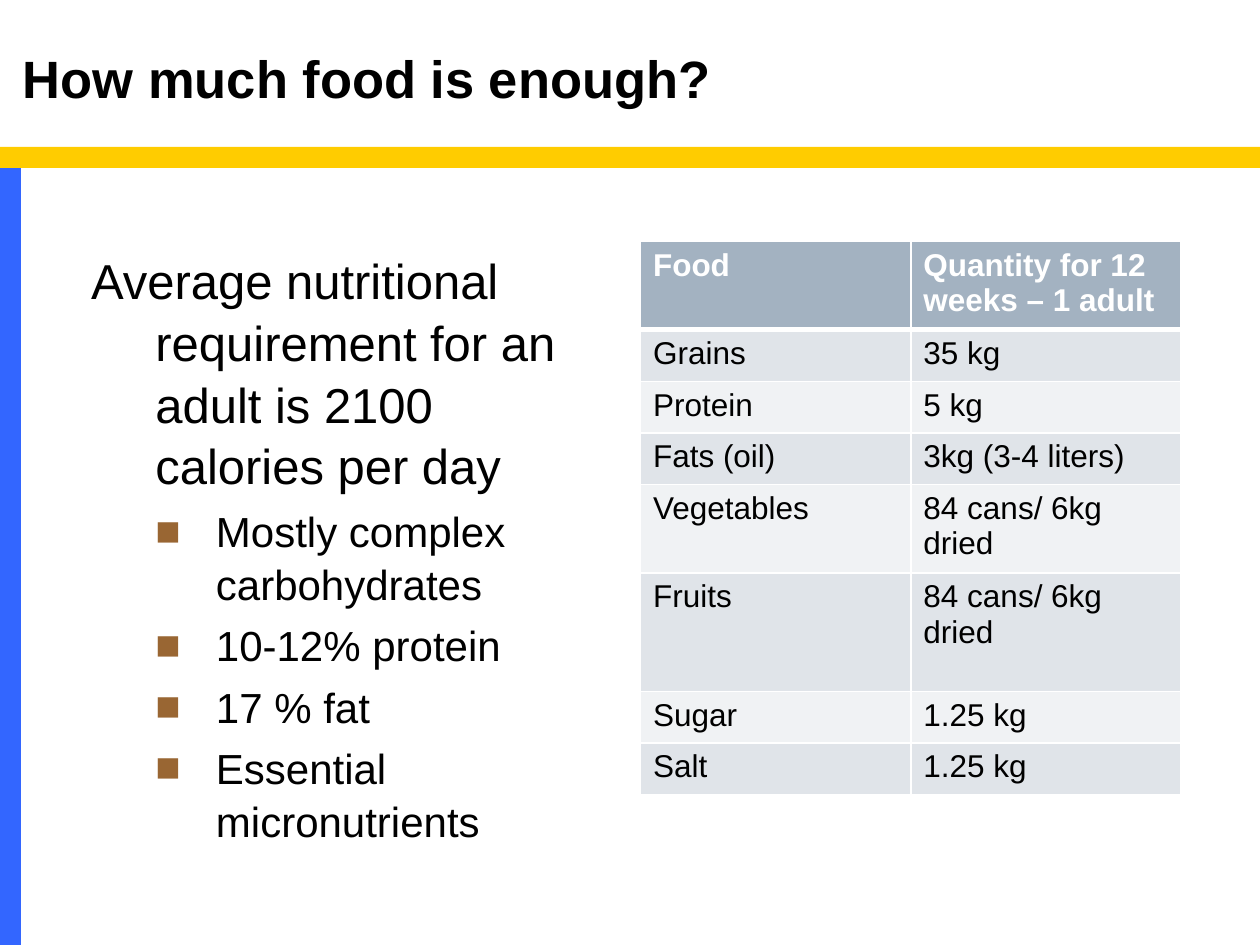
from dataclasses import dataclass

from lxml import etree
from pptx import Presentation
from pptx import util as u
from pptx.dml.color import RGBColor
from pptx.enum import shapes, text
from pptx.oxml.ns import qn


@dataclass(frozen=True)
class Theme:
    """Colours, font and type sizes of the slide."""
    font: str = "Arial"
    ink: str = "000000"
    paper: str = "FFFFFF"
    band: str = "FFCC00"
    rail: str = "3366FF"
    bullet: str = "996633"
    header: str = "A3B2C1"
    stripes: tuple = ("E0E4E9", "F0F2F4")
    title_size: int = 30
    lead_size: int = 28
    point_size: int = 24
    table_size: int = 18


THEME = Theme()
COLUMNS, ROWS = 60, 45
SLIDE_WIDTH, SLIDE_HEIGHT = u.Inches(10), u.Inches(7.5)
LEAD = "Average nutritional requirement for an adult is 2100 calories per day"
POINTS = ["Mostly complex carbohydrates", "10-12% protein", "17 % fat",
          "Essential micronutrients"]
RATIONS = [
    ("Food", "Quantity for 12 weeks – 1 adult"),
    ("Grains", "35 kg"),
    ("Protein", "5 kg"),
    ("Fats (oil)", "3kg (3-4 liters)"),
    ("Vegetables", "84 cans/ 6kg dried"),
    ("Fruits", "84 cans/ 6kg dried"),
    ("Sugar", "1.25 kg"),
    ("Salt", "1.25 kg"),
]
LINE_HEIGHT = 0.41
TALL_ROWS = {0: 0.66, 4: 0.66, 5: 0.94}


def grid(left, top, width, height):
    """Turn grid columns and rows into a slide position and size."""
    across, down = SLIDE_WIDTH / COLUMNS, SLIDE_HEIGHT / ROWS
    return [u.Emu(round(n)) for n in
            (left * across, top * down, width * across, height * down)]


def add_bar(slide, area, colour):
    """Draw a plain coloured bar."""
    bar = slide.shapes.add_shape(shapes.MSO_SHAPE.RECTANGLE, *grid(*area))
    bar.shadow.inherit = False
    bar.fill.solid()
    bar.fill.fore_color.rgb = RGBColor.from_string(colour)
    bar.line.fill.background()


def add_run(paragraph, words, size, colour=THEME.ink, bold=False):
    """Append one formatted run to a paragraph."""
    run = paragraph.add_run()
    run.text = words
    run.font.name, run.font.size, run.font.bold = THEME.font, u.Pt(size), bold
    run.font.color.rgb = RGBColor.from_string(colour)


def add_frame(slide, area, anchor):
    """Add a wrapping text box and return its text frame."""
    frame = slide.shapes.add_textbox(*grid(*area)).text_frame
    frame.word_wrap = True
    frame.vertical_anchor = anchor
    return frame


def format_item(paragraph, size, margin, hanging, bullet=None):
    """Set a hanging indent, spacing and an optional square bullet."""
    paragraph.space_before = u.Pt(0.2 * size)
    paragraph.line_spacing = 1.05
    properties = paragraph._p.get_or_add_pPr()
    properties.set("marL", str(u.Inches(margin)))
    properties.set("indent", str(-u.Inches(hanging)))
    if bullet:
        colour = etree.SubElement(properties, qn("a:buClr"))
        etree.SubElement(colour, qn("a:srgbClr"), val=THEME.bullet)
        etree.SubElement(properties, qn("a:buFont"), typeface=THEME.font)
        etree.SubElement(properties, qn("a:buChar"), char=bullet)


def add_requirements(slide, area):
    """Write the lead sentence and its bulleted points."""
    frame = add_frame(slide, area, text.MSO_ANCHOR.TOP)
    lead = frame.paragraphs[0]
    format_item(lead, THEME.lead_size, 0.51, 0.51)
    add_run(lead, LEAD, THEME.lead_size)
    for words in POINTS:
        point = frame.add_paragraph()
        point.level = 1
        format_item(point, THEME.point_size, 0.99, 0.48, "■")
        add_run(point, words, THEME.point_size)


def set_borders(cell, **widths):
    """Rule the sides of a cell in the paper colour, widths in points."""
    properties = cell._tc.get_or_add_tcPr()
    for position, (side, width) in enumerate(widths.items()):
        rule = etree.Element(qn(f"a:ln{side}"), w=str(u.Pt(width)))
        fill = etree.SubElement(rule, qn("a:solidFill"))
        etree.SubElement(fill, qn("a:srgbClr"), val=THEME.paper)
        properties.insert(position, rule)


def add_rations(slide, area):
    """Build the table of food quantities with striped rows."""
    table = slide.shapes.add_table(len(RATIONS), 2, *grid(*area)).table
    for row, foods in enumerate(RATIONS):
        heading = row == 0
        table.rows[row].height = u.Inches(TALL_ROWS.get(row, LINE_HEIGHT))
        fill = THEME.header if heading else THEME.stripes[(row - 1) % 2]
        ink = THEME.paper if heading else THEME.ink
        for column, words in enumerate(foods):
            cell = table.cell(row, column)
            cell.fill.solid()
            cell.fill.fore_color.rgb = RGBColor.from_string(fill)
            set_borders(cell, L=1, R=1, T=3 if row == 1 else 1,
                        B=3 if heading else 1)
            add_run(cell.text_frame.paragraphs[0], words,
                    THEME.table_size, ink, heading)


def main():
    """Build the slide and save it."""
    deck = Presentation()
    deck.slide_width, deck.slide_height = SLIDE_WIDTH, SLIDE_HEIGHT
    slide = deck.slides.add_slide(deck.slide_layouts[6])
    add_bar(slide, (0, 7, COLUMNS, 1), THEME.band)
    add_bar(slide, (0, 8, 1, ROWS - 8), THEME.rail)
    title = add_frame(slide, (0.5, 1.5, 52.5, 4), text.MSO_ANCHOR.BOTTOM)
    add_run(title.paragraphs[0], "How much food is enough?",
            THEME.title_size, bold=True)
    add_requirements(slide, (3.75, 11.5, 25.75, 28))
    add_rations(slide, (30.5, 11.5, 25.75, 26))
    deck.save("out.pptx")


if __name__ == "__main__":
    main()
